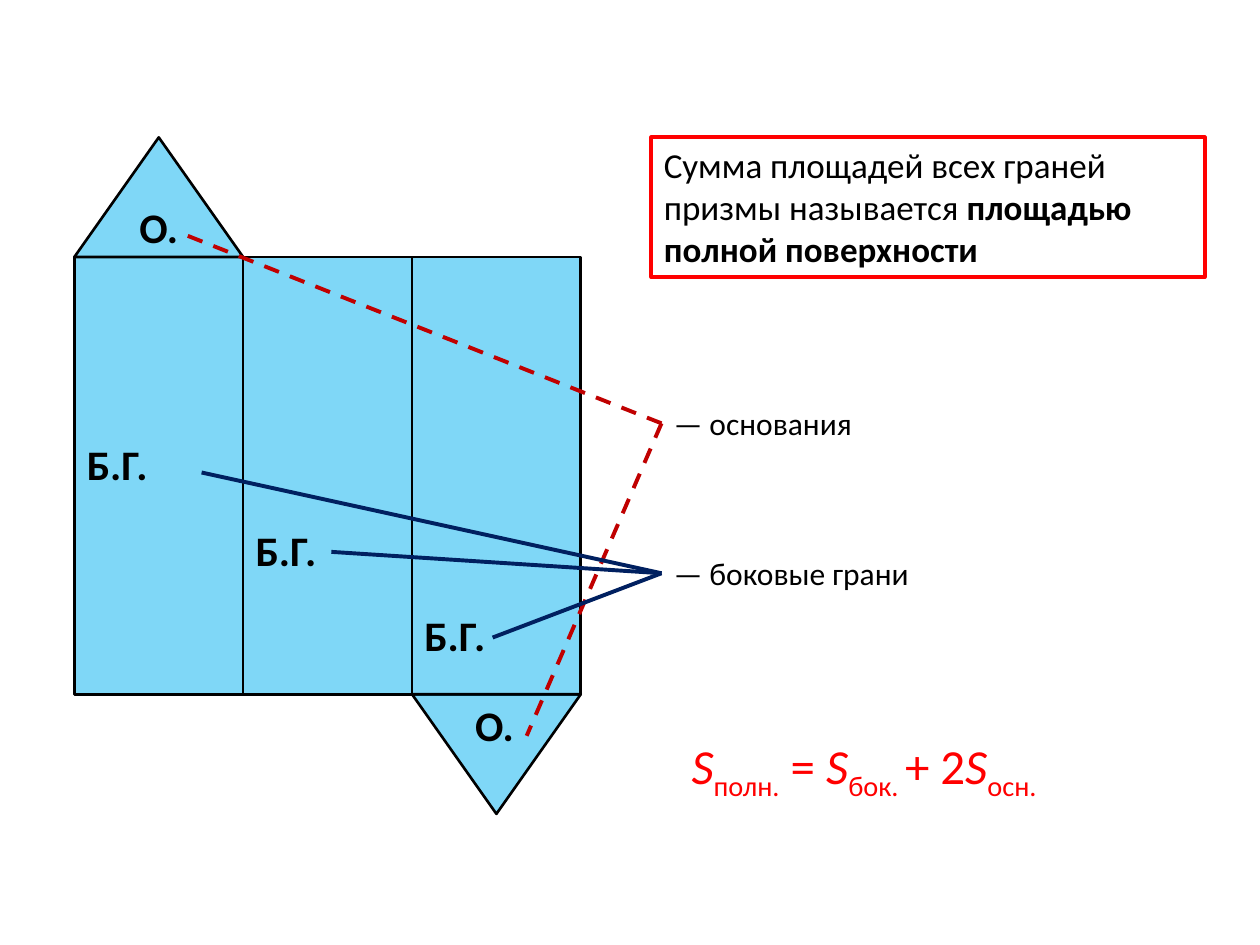
from lxml import etree
from pptx import Presentation
from pptx.dml.color import RGBColor
from pptx.enum.dml import MSO_LINE
from pptx.enum.shapes import MSO_CONNECTOR, MSO_SHAPE
from pptx.enum.text import MSO_ANCHOR, MSO_AUTO_SIZE, PP_ALIGN
from pptx.oxml.ns import qn
from pptx.util import Inches, Pt

RECTANGLE = MSO_SHAPE.RECTANGLE
TRIANGLE = MSO_SHAPE.ISOSCELES_TRIANGLE
STRAIGHT = MSO_CONNECTOR.STRAIGHT
DASH = MSO_LINE.DASH
LEFT, CENTER = PP_ALIGN.LEFT, PP_ALIGN.CENTER
TOP, MIDDLE = MSO_ANCHOR.TOP, MSO_ANCHOR.MIDDLE
FIT_SHAPE, NO_FIT = MSO_AUTO_SIZE.SHAPE_TO_FIT_TEXT, MSO_AUTO_SIZE.NONE
LEFT_SIDE = 1


def rgb(value):
    return RGBColor.from_string(value)


def write(shape, text, size=24, color="000000", bold=False, align=LEFT,
          anchor=TOP, wrap=False, fit=FIT_SHAPE):
    frame = shape.text_frame
    frame.word_wrap = wrap
    frame.auto_size = fit
    frame.vertical_anchor = anchor
    paragraph = frame.paragraphs[0]
    paragraph.alignment = align
    parts = [(text, "")] if isinstance(text, str) else text
    for words, style in parts:
        run = paragraph.add_run()
        run.text = words
        run.font.name = "Calibri"
        run.font.size = Pt(size)
        run.font.color.rgb = rgb(color)
        run.font.bold = bold or style == "bold"
        run.font.italic = style == "italic"
        if style == "sub":
            run.font._element.set("baseline", "-25000")


prs = Presentation()
prs.slide_width, prs.slide_height = Inches(10), Inches(7.5)
slide = prs.slides.add_slide(prs.slide_layouts[6])
shapes = slide.shapes

net_left, net_top = 0.59, 2.04
face_width, face_height, base_height = 1.34, 3.47, 0.95
face_lefts = [net_left + i * face_width for i in range(3)]

net_parts = [(RECTANGLE, left, net_top, face_height) for left in face_lefts]
net_parts += [
    (TRIANGLE, face_lefts[0], net_top - base_height, base_height),
    (TRIANGLE, face_lefts[2], net_top + face_height, base_height),
]
for kind, left, top, height in net_parts:
    part = shapes.add_shape(kind, Inches(left), Inches(top), Inches(face_width), Inches(height))
    part.shadow.inherit = False
    part.fill.solid()
    part.fill.fore_color.rgb = rgb("00B0F0")
    fill_color = part.element.spPr.find(qn("a:solidFill"))[0]
    etree.SubElement(fill_color, qn("a:alpha")).set("val", "50000")
    part.line.color.rgb = rgb("000000")
    part.line.width = Pt(1.5)
    if kind == TRIANGLE and top < net_top:
        write(part, "О.", bold=True, align=CENTER, anchor=MIDDLE, wrap=True, fit=NO_FIT)
    elif kind == TRIANGLE:
        part.element.spPr.find(qn("a:xfrm")).set("flipV", "1")

lower_base_label = shapes.add_textbox(Inches(3.67), Inches(5.5), Inches(0.51), Inches(0.5))
write(lower_base_label, "О.", bold=True, align=CENTER)

for i, left in enumerate(face_lefts):
    face_label = shapes.add_textbox(
        Inches(left), Inches(3.43 + i * 0.68), Inches(0.69), Inches(0.5))
    write(face_label, "Б.Г.", bold=True)

legend = [
    ("— основания", 3.16, 1.63, False, "C00000", DASH, [(1.46, 1.86), (4.18, 5.84)]),
    ("— боковые грани", 4.35, 2.24, True, "002060", None,
     [(1.6, 3.75), (2.63, 4.38), (3.91, 5.06)]),
]
for caption, top, width, wrap, color, dash, targets in legend:
    caption_box = shapes.add_textbox(Inches(5.25), Inches(top), Inches(width), Inches(0.4))
    write(caption_box, caption, size=18, wrap=wrap)
    for x, y in targets:
        pointer = shapes.add_connector(
            STRAIGHT, Inches(5.25), Inches(top + 0.2), Inches(x), Inches(y))
        pointer.begin_connect(caption_box, LEFT_SIDE)
        pointer.line.color.rgb = rgb(color)
        pointer.line.width = Pt(2.25)
        pointer.line.dash_style = dash
        etree.SubElement(pointer.element.spPr, qn("a:effectLst"))

formula = shapes.add_textbox(Inches(5.39), Inches(5.79), Inches(3.19), Inches(0.57))
write(formula, [
    ("S", "italic"), ("полн.", "sub"), (" = ", ""),
    ("S", "italic"), ("бок. ", "sub"), ("+ 2", ""),
    ("S", "italic"), ("осн.", "sub"),
], size=28, color="FF0000")

definition = shapes.add_shape(RECTANGLE, Inches(5.17), Inches(1.09), Inches(4.39), Inches(1.11))
definition.shadow.inherit = False
definition.fill.background()
definition.line.color.rgb = rgb("FF0000")
definition.line.width = Pt(2.25)
write(definition, [
    ("Сумма площадей всех граней призмы называется ", ""),
    ("площадью полной поверхности", "bold"),
], size=20, wrap=True)

prs.save("out.pptx")
